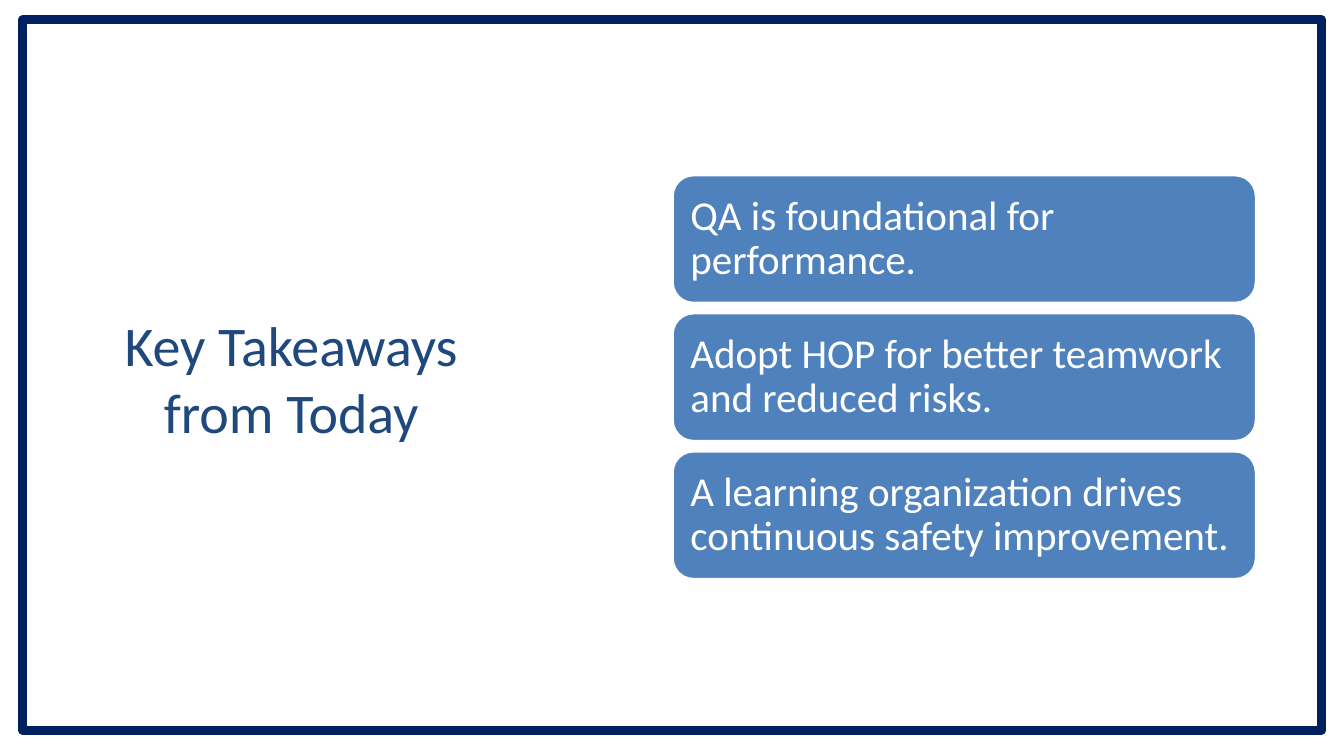
from pptx import Presentation
from pptx.dml.color import RGBColor
from pptx.enum import shapes, text
from pptx.util import Cm, Pt

TITLE = "Key Takeaways from Today"
POINTS = [
    "QA is foundational for performance.",
    "Adopt HOP for better teamwork and reduced risks.",
    "A learning organization drives continuous safety improvement.",
]

FONT = "Calibri"
NAVY = RGBColor(0x00, 0x20, 0x60)
INK = RGBColor(0x1F, 0x49, 0x7D)
BLUE = RGBColor(0x4F, 0x81, 0xBD)
WHITE = RGBColor(0xFF, 0xFF, 0xFF)

LEFT, TOP = 12.7, 3.3
WIDTH, HEIGHT = 11.05, 2.44
STEP = 2.61
INSET = Cm(0.23)


def write(frame, words, size, color, align):
    frame.word_wrap = True
    frame.vertical_anchor = text.MSO_ANCHOR.MIDDLE
    para = frame.paragraphs[0]
    para.alignment = align
    run = para.add_run()
    run.text = words
    run.font.name = FONT
    run.font.size = Pt(size)
    run.font.color.rgb = color
    return para


def add_box(slide, kind, spot, line, weight):
    box = slide.shapes.add_shape(kind, *map(Cm, spot))
    box.shadow.inherit = False
    box.line.color.rgb = line
    box.line.width = Pt(weight)
    return box


def add_card(slide, row, words):
    spot = (LEFT, TOP + row * STEP, WIDTH, HEIGHT)
    card = add_box(slide, shapes.MSO_SHAPE.ROUNDED_RECTANGLE, spot, WHITE, 2)
    card.fill.solid()
    card.fill.fore_color.rgb = BLUE
    frame = card.text_frame
    frame.margin_left = frame.margin_right = INSET
    frame.margin_top = frame.margin_bottom = INSET
    para = write(frame, words, 22, WHITE, text.PP_ALIGN.LEFT)
    para.line_spacing = 0.9


def main():
    deck = Presentation()
    deck.slide_width, deck.slide_height = Cm(25.4), Cm(14.29)
    slide = deck.slides.add_slide(deck.slide_layouts[5])

    border = add_box(slide, shapes.MSO_SHAPE.RECTANGLE,
                     (0.43, 0.37, 24.55, 13.44), NAVY, 4.5)
    border.fill.background()

    title = slide.shapes.title
    title.left, title.top = Cm(1.68), Cm(4.27)
    title.width, title.height = Cm(7.65), Cm(5.74)
    write(title.text_frame, TITLE, 30, INK, text.PP_ALIGN.CENTER)

    for row, words in enumerate(POINTS):
        add_card(slide, row, words)

    deck.save("out.pptx")


if __name__ == "__main__":
    main()
